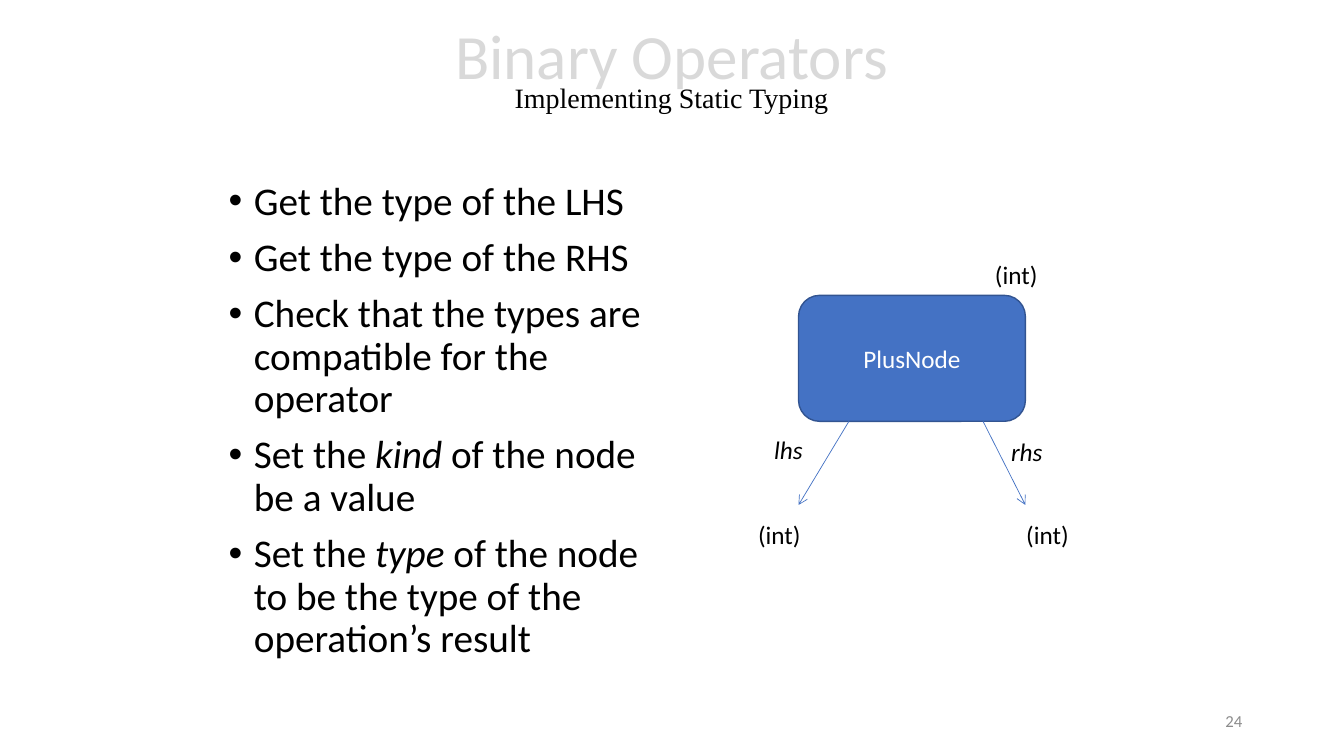
import dataclasses
import typing

import pptx
import pptx.dml.color
import pptx.enum.shapes
import pptx.enum.text
import pptx.oxml
import pptx.oxml.ns
import pptx.util

Inches = pptx.util.Inches
Pt = pptx.util.Pt
Align = pptx.enum.text.PP_ALIGN
Anchor = pptx.enum.text.MSO_ANCHOR
FONT = "Calibri"
BLUE = "4472C4"
BLACK = "000000"


@dataclasses.dataclass
class Label:
    text: str
    left: float
    top: float
    width: float
    slant: bool = False


@dataclasses.dataclass
class Arrow:
    start: tuple[float, float]
    end: tuple[float, float]


LABELS = [
    Label("(int)", 7.42, 5.1, 0.63),
    Label("lhs", 7.58, 4.26, 0.49, True),
    Label("rhs", 9.93, 4.28, 0.52, True),
    Label("(int)", 10.08, 5.1, 0.63),
    Label("(int)", 9.77, 2.52, 0.63),
]
ARROWS = [
    Arrow((8.42, 4.18), (7.92, 5.01)),
    Arrow((9.75, 4.18), (10.17, 5.01)),
]
# Words between asterisks are italic.
STEPS = [
    "Get the type of the LHS",
    "Get the type of the RHS",
    "Check that the types are compatible for the operator",
    "Set the *kind *of the node be a value",
    "Set the *type *of the node to be the type of the operation’s result",
]


def color(code: str) -> pptx.dml.color.RGBColor:
    return pptx.dml.color.RGBColor.from_string(code)


def style(run: typing.Any, size: float, code: str = BLACK,
          face: str = FONT, slant: bool = False) -> None:
    font = run.font
    font.name = face
    font.size = Pt(size)
    font.italic = slant
    font.color.rgb = color(code)


def add_box(slide: typing.Any, left: float, top: float, width: float,
            height: float, wrap: bool = True,
            anchor: typing.Any = Anchor.TOP) -> typing.Any:
    """Add a text box and return its text frame."""
    box = slide.shapes.add_textbox(
        Inches(left), Inches(top), Inches(width), Inches(height))
    frame = box.text_frame
    frame.word_wrap = wrap
    frame.vertical_anchor = anchor
    return frame


def add_title(slide: typing.Any) -> None:
    frame = add_box(slide, 2.35, 0.02, 8.62, 1.45, anchor=Anchor.MIDDLE)
    frame.text = "Binary Operators\vImplementing Static Typing"
    para = frame.paragraphs[0]
    para.alignment = Align.CENTER
    para.line_spacing = 0.7
    head, sub = para.runs
    style(head, 45, "D9D9D9")
    style(sub, 20, face="Times New Roman")


def add_bullet(para: typing.Any) -> None:
    props = para._p.get_or_add_pPr()
    props.set("marL", str(Inches(0.25)))
    props.set("indent", str(-Inches(0.25)))
    space = pptx.oxml.ns.nsdecls("a")
    for tag in ('buFont {} typeface="Arial"', 'buChar {} char="•"'):
        props.append(pptx.oxml.parse_xml(f"<a:{tag.format(space)}/>"))


def add_steps(slide: typing.Any) -> None:
    frame = add_box(slide, 2.17, 1.75, 4.33, 4.95)
    for index, step in enumerate(STEPS):
        para = frame.add_paragraph() if index else frame.paragraphs[0]
        para.line_spacing = 0.9
        para.space_before = Pt(10)
        add_bullet(para)
        for turn, part in enumerate(step.split("*")):
            run = para.add_run()
            run.text = part
            style(run, 28, slant=turn % 2 == 1)


def add_number(slide: typing.Any) -> None:
    frame = add_box(slide, 9.42, 6.95, 3, 0.4, anchor=Anchor.MIDDLE)
    frame.text = "24"
    para = frame.paragraphs[0]
    para.alignment = Align.RIGHT
    style(para.runs[0], 12, "8C8C8C")


def add_node(slide: typing.Any) -> None:
    node = slide.shapes.add_shape(
        pptx.enum.shapes.MSO_SHAPE.ROUNDED_RECTANGLE,
        Inches(7.92), Inches(2.93), Inches(2.25), Inches(1.25))
    node.shadow.inherit = False
    node.fill.solid()
    node.fill.fore_color.rgb = color(BLUE)
    node.line.color.rgb = color("325491")
    node.line.width = Pt(1)
    frame = node.text_frame
    frame.text = "PlusNode"
    frame.vertical_anchor = Anchor.MIDDLE
    para = frame.paragraphs[0]
    para.alignment = Align.CENTER
    style(para.runs[0], 18, "FFFFFF")


def add_arrow(slide: typing.Any, arrow: Arrow) -> None:
    ends = [Inches(value) for value in (*arrow.start, *arrow.end)]
    edge = slide.shapes.add_connector(
        pptx.enum.shapes.MSO_CONNECTOR.STRAIGHT, *ends)
    edge.line.color.rgb = color(BLUE)
    edge.line.width = Pt(0.5)
    space = pptx.oxml.ns.nsdecls("a")
    edge.line._get_or_add_ln().append(
        pptx.oxml.parse_xml(f'<a:tailEnd {space} type="arrow"/>'))
    edge._element.spPr.append(
        pptx.oxml.parse_xml(f"<a:effectLst {space}/>"))


def add_label(slide: typing.Any, label: Label) -> None:
    frame = add_box(slide, label.left, label.top, label.width, 0.4, wrap=False)
    frame.auto_size = pptx.enum.text.MSO_AUTO_SIZE.SHAPE_TO_FIT_TEXT
    frame.text = label.text
    style(frame.paragraphs[0].runs[0], 18, slant=label.slant)


def main() -> None:
    deck = pptx.Presentation()
    deck.slide_width = Inches(13.33)
    deck.slide_height = Inches(7.5)
    slide = deck.slides.add_slide(deck.slide_layouts[6])
    add_title(slide)
    add_steps(slide)
    add_number(slide)
    add_node(slide)
    for arrow in ARROWS:
        add_arrow(slide, arrow)
    for label in LABELS:
        add_label(slide, label)
    deck.save("out.pptx")


if __name__ == "__main__":
    main()
